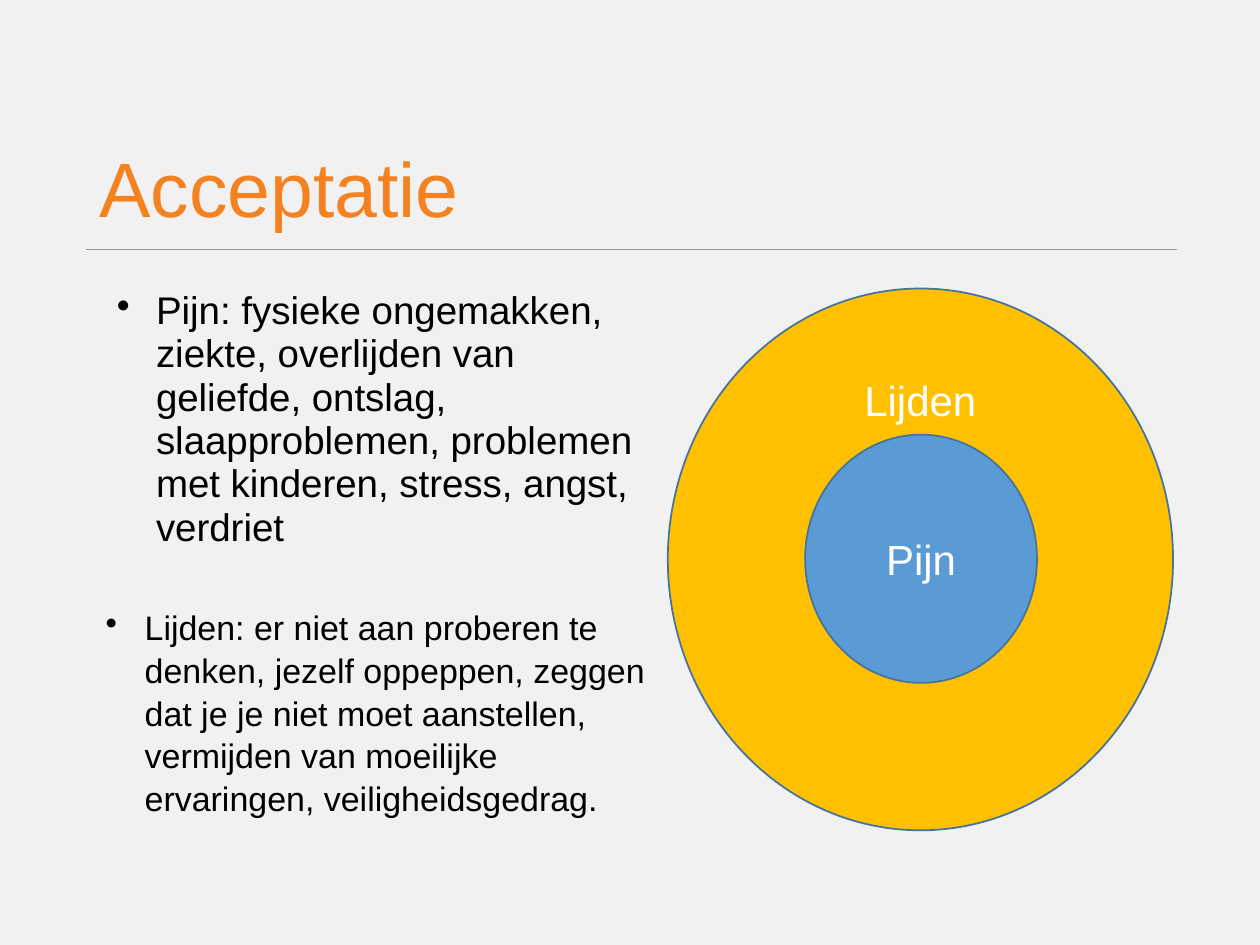
import pptx
import pptx.util
import pptx.dml.color
import pptx.enum.shapes
import pptx.enum.text
import pptx.oxml.ns
import lxml.etree

Inches = pptx.util.Inches
Pt = pptx.util.Pt
Anchor = pptx.enum.text.MSO_ANCHOR
Align = pptx.enum.text.PP_ALIGN

HUES = {
    "back": "F1F1F1",
    "title": "F58220",
    "rule": "999999",
    "text": "000000",
    "label": "FFFFFF",
    "outer": "FFC000",
    "inner": "5B9BD5",
    "edge": "43739E",
}


def tint(name):
    return pptx.dml.color.RGBColor.from_string(HUES[name])


class Deck:
    font = "Arial"

    def __init__(self, wide, high):
        self.file = pptx.Presentation()
        self.file.slide_width = Inches(wide)
        self.file.slide_height = Inches(high)
        self.slide = self.file.slides.add_slide(self.file.slide_layouts[5])
        fill = self.slide.background.fill
        fill.solid()
        fill.fore_color.rgb = tint("back")

    def label(self, shape, text, size, hue, align, anchor, space=1.0):
        frame = shape.text_frame
        frame.text = text
        frame.word_wrap = True
        frame.auto_size = pptx.enum.text.MSO_AUTO_SIZE.NONE
        frame.vertical_anchor = anchor
        para = frame.paragraphs[0]
        para.alignment = align
        para.line_spacing = space
        font = para.runs[0].font
        font.name = self.font
        font.size = Pt(size)
        font.color.rgb = tint(hue)
        return para

    def title(self, text, left, top, wide, high):
        shape = self.slide.shapes.title
        shape.left, shape.top = Inches(left), Inches(top)
        shape.width, shape.height = Inches(wide), Inches(high)
        self.label(shape, text, 44, "title", Align.LEFT, Anchor.BOTTOM, 0.9)

    def rule(self, left, right, top):
        line = self.slide.shapes.add_connector(
            pptx.enum.shapes.MSO_CONNECTOR.STRAIGHT,
            Inches(left), Inches(top), Inches(right), Inches(top))
        line.line.color.rgb = tint("rule")
        line.line.width = Pt(0.5)
        props = line._element.spPr
        lxml.etree.SubElement(props, pptx.oxml.ns.qn("a:effectLst"))

    def bullet(self, text, left, top, wide, high, size, space):
        box = self.slide.shapes.add_textbox(
            Inches(left), Inches(top), Inches(wide), Inches(high))
        para = self.label(box, text, size, "text", Align.LEFT, Anchor.TOP, space)
        props = para._p.get_or_add_pPr()
        props.set("marL", str(Inches(0.31)))
        props.set("indent", str(-Inches(0.31)))
        mark = lxml.etree.SubElement(props, pptx.oxml.ns.qn("a:buChar"))
        mark.set("char", "•")

    def ring(self, text, left, top, wide, high, hue, anchor):
        shape = self.slide.shapes.add_shape(
            pptx.enum.shapes.MSO_SHAPE.FLOWCHART_CONNECTOR,
            Inches(left), Inches(top), Inches(wide), Inches(high))
        shape.shadow.inherit = False
        shape.fill.solid()
        shape.fill.fore_color.rgb = tint(hue)
        shape.line.color.rgb = tint("edge")
        shape.line.width = Pt(1)
        self.label(shape, text, 24, "label", Align.CENTER, anchor)


def main():
    deck = Deck(10, 7.5)
    deck.rule(0.68, 9.34, 1.98)
    deck.title("Acceptatie", 0.69, 0.46, 7.29, 1.45)
    deck.bullet(
        "Pijn: fysieke ongemakken, ziekte, overlijden van geliefde, ontslag, "
        "slaapproblemen, problemen met kinderen, stress, angst, verdriet",
        0.83, 2.25, 4.38, 2.06, 22, 0.94)
    deck.ring("Lijden", 5.3, 2.29, 4.01, 4.3, "outer", Anchor.TOP)
    deck.ring("Pijn", 6.39, 3.45, 1.84, 1.97, "inner", Anchor.MIDDLE)
    deck.bullet(
        "Lijden: er niet aan proberen te denken, jezelf oppeppen, zeggen dat "
        "je je niet moet aanstellen, vermijden van moeilijke ervaringen, "
        "veiligheidsgedrag.",
        0.74, 4.75, 4.56, 2.1, 19.4, 1.05)
    deck.file.save("out.pptx")


if __name__ == "__main__":
    main()
